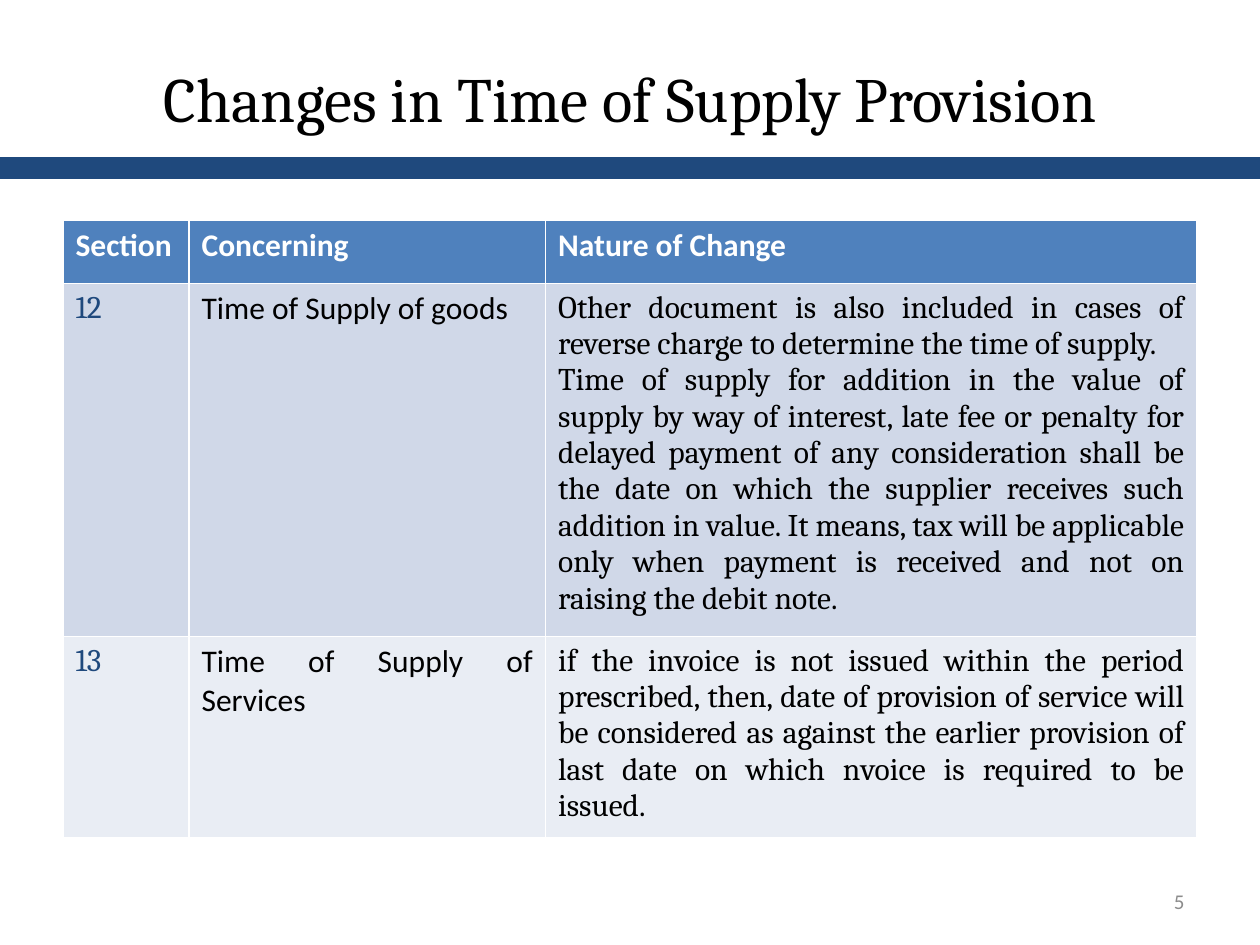
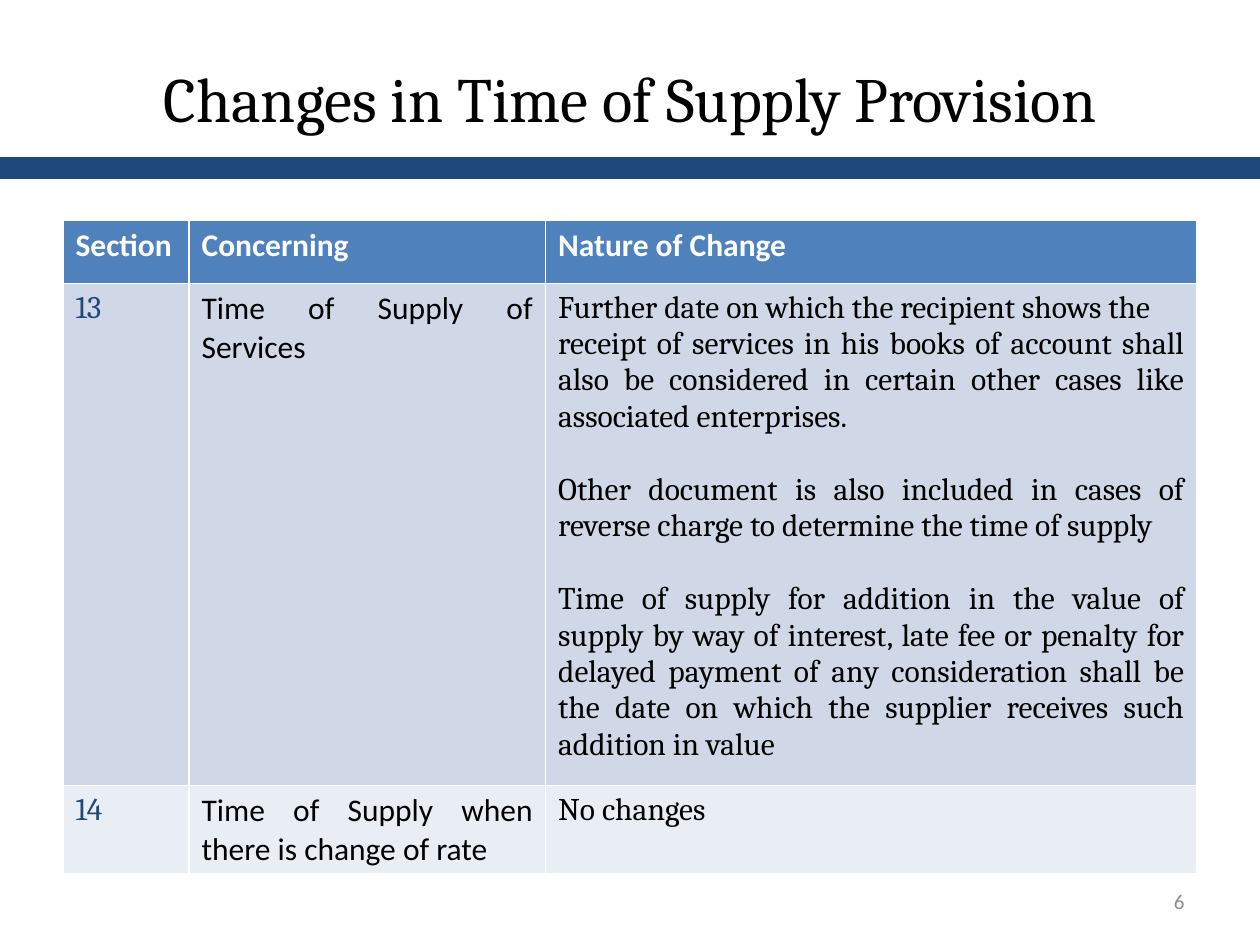
from pptx import Presentation
from pptx.dml.color import RGBColor
from pptx.enum.shapes import MSO_SHAPE
from pptx.enum.text import MSO_ANCHOR, PP_ALIGN
from pptx.util import Inches, Pt

TITLE = "Changes in Time of Supply Provision"
HEADINGS = ("Section", "Concerning", "Nature of Change")
BLANK_LINE = 21

PAGES = [
    {"number": 5, "rows": [
        ("12", "Time of Supply of goods", [
            ("Other document is also included in cases of reverse charge to determine "
             "the time of supply.", 0),
            ("Time of supply for addition in the value of supply by way of interest, "
             "late fee or penalty for delayed payment of any consideration shall be the "
             "date on which the supplier receives such addition in value. It means, tax "
             "will be applicable only when payment is received and not on raising the "
             "debit note.", 0)]),
        ("13", "Time of Supply of Services", [
            ("if the invoice is not issued within the period prescribed, then, date of "
             "provision of service will be considered as against the earlier provision "
             "of last date on which nvoice is required to be issued.", 0)]),
    ]},
    {"number": 6, "rows": [
        ("13", "Time of Supply of Services", [
            ("Further date on which the recipient shows the", 0),
            ("receipt of services in his books of account shall also be considered in "
             "certain other cases like associated enterprises.", 0),
            ("Other document is also included in cases of reverse charge to determine "
             "the time of supply", BLANK_LINE),
            ("Time of supply for addition in the value of supply by way of interest, "
             "late fee or penalty for delayed payment of any consideration shall be the "
             "date on which the supplier receives such addition in value", BLANK_LINE)]),
        ("14", "Time of Supply when there is change of rate", [("No changes", 0)]),
    ]},
]

NAVY = RGBColor(0x1F, 0x49, 0x7D)
BLUE = RGBColor(0x4F, 0x81, 0xBD)
ROW_FILLS = (RGBColor(0xD0, 0xD8, 0xE8), RGBColor(0xE9, 0xED, 0xF4))
WHITE = RGBColor(0xFF, 0xFF, 0xFF)
BLACK = RGBColor(0, 0, 0)
GREY = RGBColor(0x8C, 0x8C, 0x8C)

COLUMN_WIDTHS = (1, 2.83, 5.17)
COLUMN_STYLES = (("Cambria", NAVY), ("Calibri", BLACK), ("Cambria", BLACK))
HEADER_HEIGHT, ROW_HEIGHT = 0.5, 0.41
MARGIN, CONTENT_WIDTH = 0.5, 9


def write(frame, paragraphs, font, size, color, align, bold=False):
    """Fill a text frame with (text, space before) pairs in one style."""
    for index, (text, gap) in enumerate(paragraphs):
        para = frame.add_paragraph() if index else frame.paragraphs[0]
        para.text = text
        para.alignment = align
        para.space_before = Pt(gap)
        para.font.name, para.font.size = font, Pt(size)
        para.font.bold, para.font.color.rgb = bold, color


def fill_cell(cell, paragraphs, fill, font, color, align, bold=False):
    """Colour a table cell and write its text."""
    cell.fill.solid()
    cell.fill.fore_color.rgb = fill
    write(cell.text_frame, paragraphs, font, 18, color, align, bold)


def add_page(deck, number):
    """Add a slide with the shared title, band and page number."""
    page = deck.slides.add_slide(deck.slide_layouts[5])
    band = page.shapes.add_shape(MSO_SHAPE.RECTANGLE, 0, Inches(1.25),
                                 deck.slide_width, Inches(0.17))
    band.shadow.inherit = False
    band.fill.solid()
    band.fill.fore_color.rgb = NAVY
    band.line.color.rgb = NAVY
    band.line.width = Pt(0.75)

    title = page.shapes.title
    title.left, title.top = Inches(MARGIN), Inches(0.3)
    title.width, title.height = Inches(CONTENT_WIDTH), Inches(0.95)
    title.text_frame.vertical_anchor = MSO_ANCHOR.MIDDLE
    write(title.text_frame, [(TITLE, 0)], "Cambria", 36, BLACK, PP_ALIGN.CENTER)

    box = page.shapes.add_textbox(Inches(7.17), Inches(6.95), Inches(2.33), Inches(0.4))
    box.text_frame.word_wrap = True
    box.text_frame.vertical_anchor = MSO_ANCHOR.MIDDLE
    write(box.text_frame, [(str(number), 0)], "Calibri", 12, GREY, PP_ALIGN.RIGHT)
    return page


def add_changes_table(page, rows):
    """Add the table of changed sections."""
    height = HEADER_HEIGHT + ROW_HEIGHT * len(rows)
    table = page.shapes.add_table(len(rows) + 1, len(HEADINGS), Inches(MARGIN),
                                  Inches(1.75), Inches(CONTENT_WIDTH),
                                  Inches(height)).table
    for column, width in zip(table.columns, COLUMN_WIDTHS):
        column.width = Inches(width)
    for index, row in enumerate(table.rows):
        row.height = Inches(ROW_HEIGHT if index else HEADER_HEIGHT)
    for column, heading in enumerate(HEADINGS):
        fill_cell(table.cell(0, column), [(heading, 0)], BLUE, "Calibri", WHITE,
                  PP_ALIGN.LEFT, True)
    for index, (section, concerning, changes) in enumerate(rows):
        contents = ([(section, 0)], [(concerning, 0)], changes)
        for column, (paragraphs, style) in enumerate(zip(contents, COLUMN_STYLES)):
            fill_cell(table.cell(index + 1, column), paragraphs,
                      ROW_FILLS[index % 2], *style, PP_ALIGN.JUSTIFY)


def main():
    """Build and save the deck."""
    deck = Presentation()
    deck.slide_width, deck.slide_height = Inches(10), Inches(7.5)
    for content in PAGES:
        page = add_page(deck, content["number"])
        add_changes_table(page, content["rows"])
    deck.save("out.pptx")


if __name__ == "__main__":
    main()
